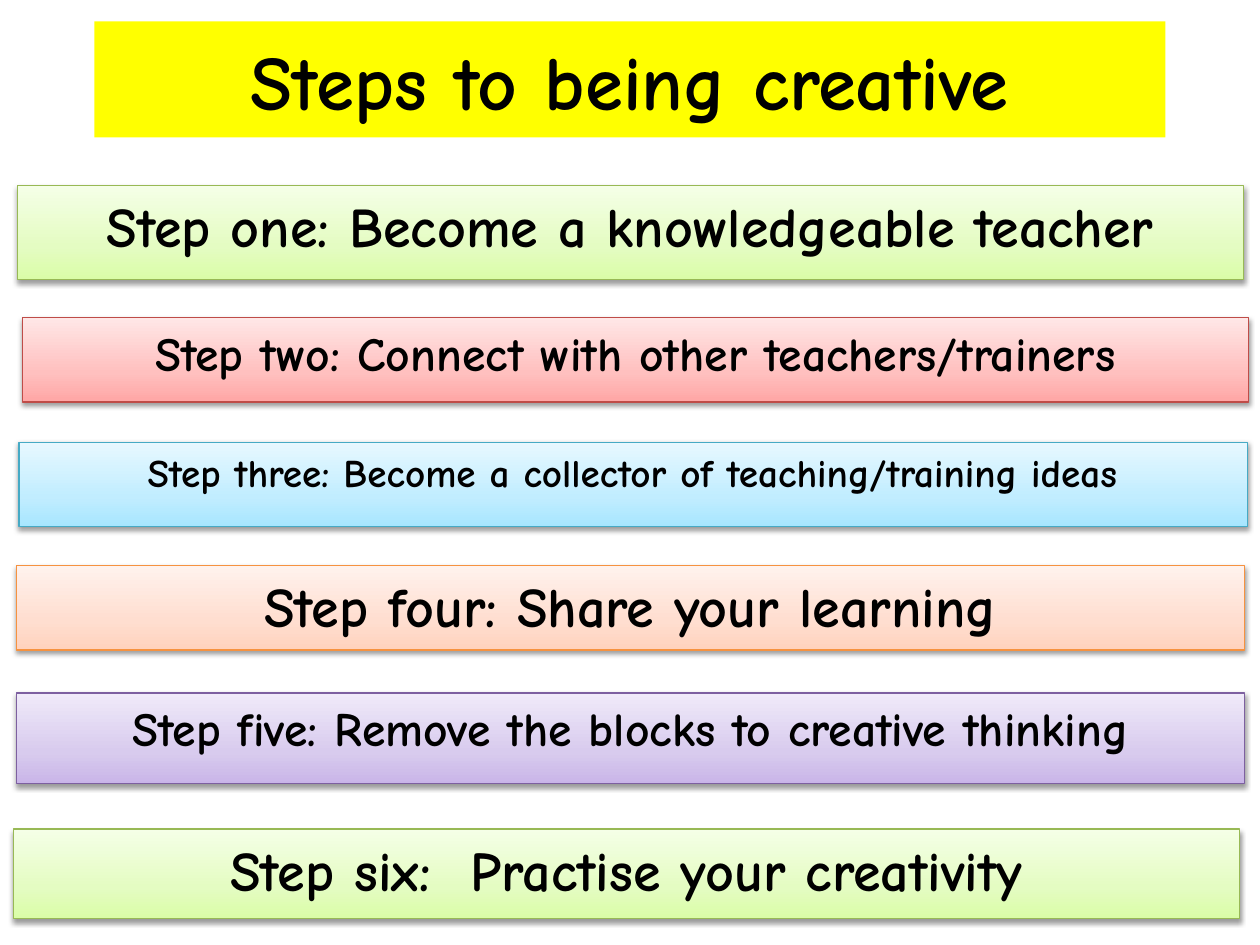
from copy import deepcopy

from lxml import etree
from pptx import Presentation
from pptx.dml.color import RGBColor
from pptx.enum.shapes import MSO_SHAPE
from pptx.enum.text import MSO_ANCHOR, PP_ALIGN
from pptx.oxml import parse_xml
from pptx.oxml.ns import nsdecls, qn
from pptx.util import Inches, Pt

RECTANGLE = MSO_SHAPE.RECTANGLE
CENTER = PP_ALIGN.CENTER
TOP, MIDDLE = MSO_ANCHOR.TOP, MSO_ANCHOR.MIDDLE

FONT = "Comic Neue"
BLACK = RGBColor(0x00, 0x00, 0x00)
YELLOW = RGBColor(0xFF, 0xFF, 0x00)

# Each theme: line colour, then gradient colours from bottom to top
GREEN = [RGBColor.from_string(c) for c in ("98B955", "DAFDA7", "E4FCC2", "F5FFE7")]
RED = [RGBColor.from_string(c) for c in ("BF4C48", "FFA6A5", "FFC0BF", "FFE7E7")]
BLUE = [RGBColor.from_string(c) for c in ("46AAC5", "A7E6FF", "C1EDFF", "E7F8FF")]
ORANGE = [RGBColor.from_string(c) for c in ("F69240", "FFD2BD", "FFDED0", "FFF2ED")]
PURPLE = [RGBColor.from_string(c) for c in ("7D60A0", "C9B5E8", "D8CBEE", "F0EAF9")]
GRADIENT_POSITIONS = (0, 0.35, 1)

TITLE = ("Steps to being creative", 44, (0.75, 0.17, 8.5, 0.92))

# text, size, (left, top, width, height), theme
STEPS = [
    ("Step one: Become a knowledgeable teacher", 32, (0.14, 1.47, 9.73, 0.75), GREEN),
    ("Step two: Connect with other teachers/trainers", 27.2, (0.18, 2.52, 9.73, 0.67), RED),
    ("Step three: Become a collector of teaching/training ideas", 22.4,
     (0.15, 3.51, 9.75, 0.67), BLUE),
    ("Step four: Share your learning", 32, (0.13, 4.49, 9.75, 0.67), ORANGE),
    ("Step five: Remove the blocks to creative thinking", 27.2, (0.13, 5.5, 9.75, 0.72), PURPLE),
    ("Step six:  Practise your creativity", 32, (0.11, 6.58, 9.73, 0.71), GREEN),
]


def add_bar(slide, text, size, box, anchor):
    shape = slide.shapes.add_shape(RECTANGLE, *map(Inches, box))
    shape.shadow.inherit = False
    frame = shape.text_frame
    frame.word_wrap = True
    frame.vertical_anchor = anchor
    paragraph = frame.paragraphs[0]
    paragraph.alignment = CENTER
    run = paragraph.add_run()
    run.text = text
    for name, value in {"name": FONT, "size": Pt(size), "bold": True}.items():
        setattr(run.font, name, value)
    run.font.color.rgb = BLACK
    return shape


def fill_gradient(shape, colors):
    shape.fill.gradient()
    shape.fill.gradient_angle = 90
    stop_list = shape._element.spPr.find(qn("a:gradFill")).find(qn("a:gsLst"))
    stop_list.append(deepcopy(stop_list[0]))
    for stop, color, position in zip(shape.fill.gradient_stops, colors, GRADIENT_POSITIONS):
        stop.color.rgb = color
        stop.position = position


def add_drop_shadow(shape):
    effects = shape._element.spPr.find(qn("a:effectLst"))
    effects.append(parse_xml(
        f'<a:outerShdw {nsdecls("a")} blurRad="{Pt(3.1)}" dist="{Pt(1.6)}" dir="5400000"'
        ' rotWithShape="0"><a:srgbClr val="000000"><a:alpha val="38000"/></a:srgbClr>'
        '</a:outerShdw>'))


def set_relative_space_before(paragraph, percent):
    properties = paragraph._p.get_or_add_pPr()
    space = etree.SubElement(properties, qn("a:spcBef"))
    etree.SubElement(space, qn("a:spcPct")).set("val", str(percent * 1000))


def main():
    presentation = Presentation()
    presentation.slide_width = Inches(10)
    presentation.slide_height = Inches(7.5)
    slide = presentation.slides.add_slide(presentation.slide_layouts[6])

    title = add_bar(slide, *TITLE, MIDDLE)
    title.fill.solid()
    title.fill.fore_color.rgb = YELLOW
    title.line.fill.background()

    for text, size, box, (line_color, *gradient) in STEPS:
        bar = add_bar(slide, text, size, box, TOP)
        fill_gradient(bar, gradient)
        bar.line.color.rgb = line_color
        bar.line.width = Pt(0.75)
        add_drop_shadow(bar)
        set_relative_space_before(bar.text_frame.paragraphs[0], 20)

    presentation.save("out.pptx")


if __name__ == "__main__":
    main()
